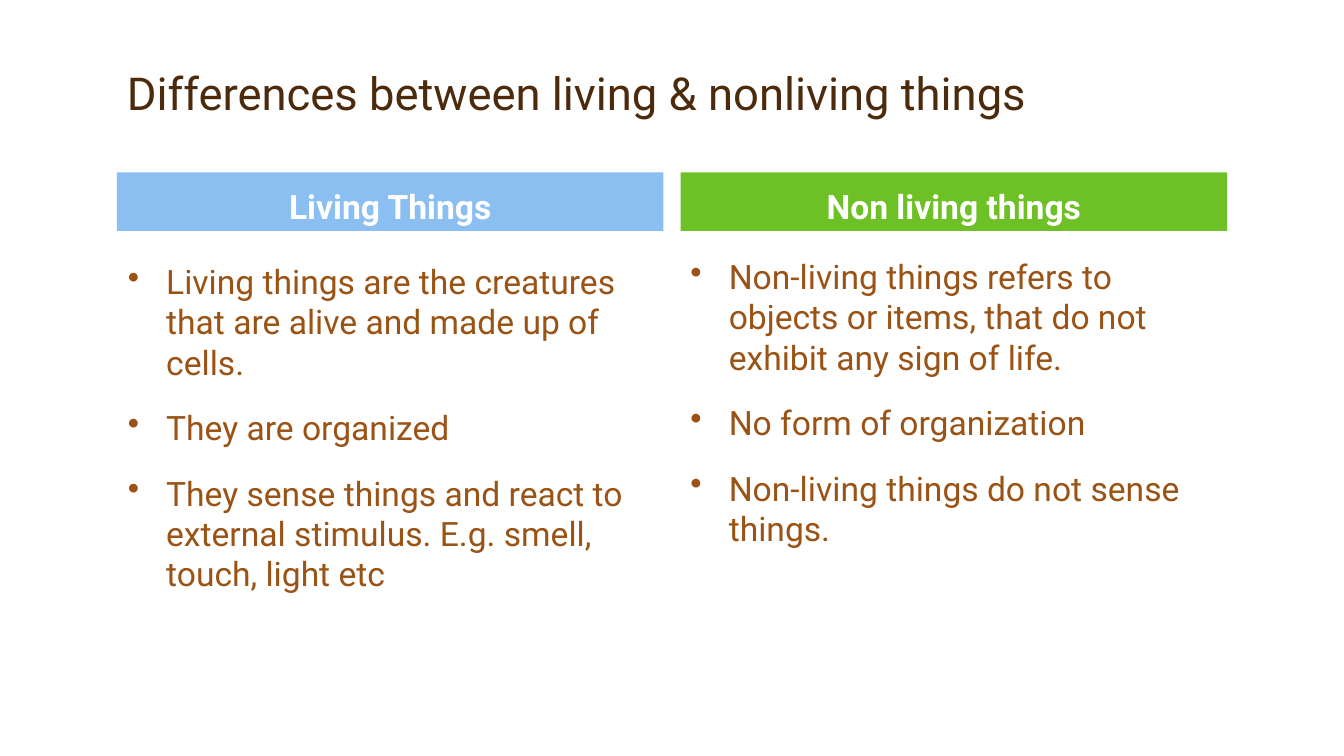
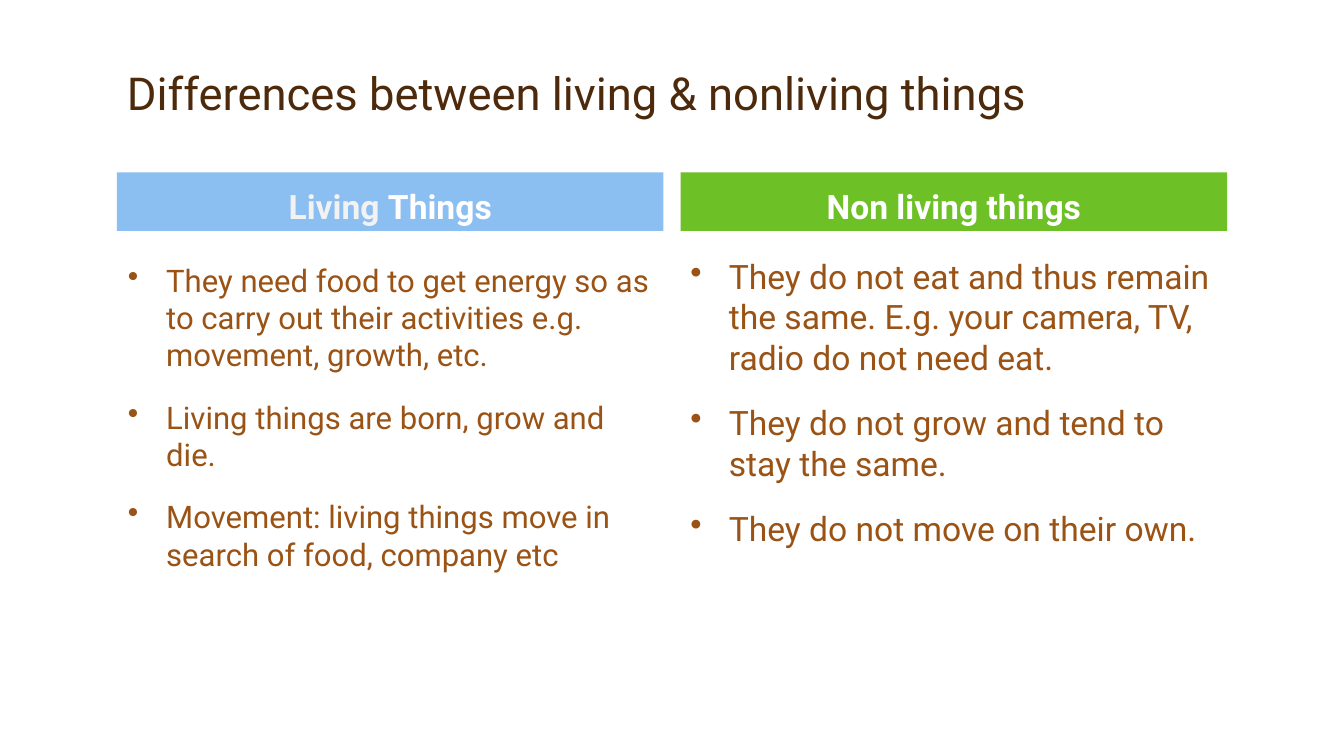
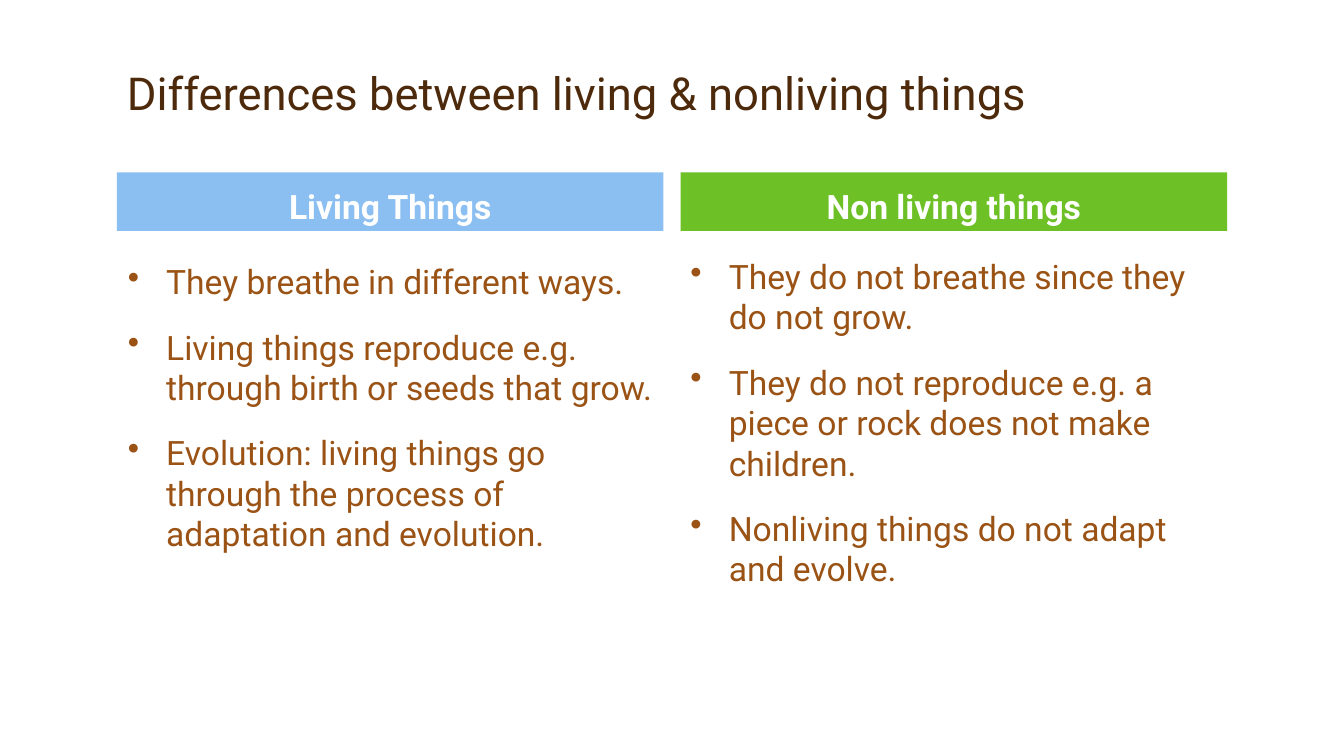
from lxml.etree import SubElement
from pptx import Presentation
from pptx.dml.color import RGBColor
from pptx.enum.shapes import MSO_SHAPE
from pptx.enum.text import MSO_ANCHOR, PP_ALIGN
from pptx.oxml.ns import qn
from pptx.util import Pt

PX = 9144
FONT = "Roboto"
TITLE_BROWN = RGBColor(0x4D, 0x2A, 0x0B)
BODY_BROWN = RGBColor(0x9A, 0x53, 0x15)
SKY = RGBColor(0x8B, 0xBE, 0xF1)
GREEN = RGBColor(0x6D, 0xC0, 0x25)
WHITE = RGBColor(0xFF, 0xFF, 0xFF)
PALE = RGBColor(0xF2, 0xF2, 0xF2)

LEFT = 116
COLUMN_WIDTH = 542
COLUMN_STEP = 559
TITLE = "Differences between living & nonliving things"


class ComparisonDeck:
    """Builds slides that compare two columns under a shared title."""

    def __init__(self):
        self.deck = Presentation()
        self.deck.slide_width = 1333 * PX
        self.deck.slide_height = 750 * PX
        self.slide = None

    def new_slide(self):
        self.slide = self.deck.slides.add_slide(self.deck.slide_layouts[6])

    def style(self, paragraph, size, color, bold=False):
        paragraph.font.name = FONT
        paragraph.font.size = Pt(size)
        paragraph.font.color.rgb = color
        paragraph.font.bold = bold

    def text_frame(self, left, top, width, height):
        box = self.slide.shapes.add_textbox(left * PX, top * PX, width * PX, height * PX)
        box.text_frame.word_wrap = True
        return box.text_frame

    def title(self, wording):
        frame = self.text_frame(LEFT, 33, 1100, 91)
        frame.vertical_anchor = MSO_ANCHOR.BOTTOM
        heading = frame.paragraphs[0]
        heading.text = wording
        heading.line_spacing = 0.9
        self.style(heading, 32.4, TITLE_BROWN)

    def band(self, left, words, fill, first_word_color):
        band = self.slide.shapes.add_shape(
            MSO_SHAPE.RECTANGLE, left * PX, 171 * PX, COLUMN_WIDTH * PX, 58 * PX)
        band.shadow.inherit = False
        band.fill.solid()
        band.fill.fore_color.rgb = fill
        band.line.fill.background()
        band.text_frame.word_wrap = True
        band.text_frame.vertical_anchor = MSO_ANCHOR.BOTTOM
        label = band.text_frame.paragraphs[0]
        label.alignment = PP_ALIGN.CENTER
        self.style(label, 24, WHITE, bold=True)
        first, rest = words.split(" ", 1)
        if first_word_color == WHITE:
            label.add_run().text = words
        else:
            first_word = label.add_run()
            first_word.text = first + " "
            first_word.font.color.rgb = first_word_color
            label.add_run().text = rest

    def bullets(self, left, top, points, size):
        frame = self.text_frame(left, top, COLUMN_WIDTH, 380)
        for index, point in enumerate(points):
            paragraph = frame.add_paragraph() if index else frame.paragraphs[0]
            paragraph.text = point
            properties = paragraph._p.get_or_add_pPr()
            properties.set("marL", str(38 * PX))
            properties.set("indent", str(-38 * PX))
            SubElement(properties, qn("a:buChar")).set("char", "•")
            if index:
                paragraph.space_before = Pt(18)
            self.style(paragraph, size, BODY_BROWN)

    def comparison(self, living, nonliving, living_size=24, first_word_color=WHITE):
        self.new_slide()
        self.title(TITLE)
        right = LEFT + COLUMN_STEP
        self.band(LEFT, "Living Things", SKY, first_word_color)
        self.bullets(LEFT + 1, 254, living, living_size)
        self.band(right, "Non living things", GREEN, WHITE)
        self.bullets(right, 249, nonliving, 24)


def main():
    lesson = ComparisonDeck()
    lesson.comparison(
        ["Living things are the creatures that are alive and made up of cells.",
         "They are organized",
         "They sense things and react to external stimulus. E.g. smell, touch, light etc"],
        ["Non-living things refers to objects or items, that do not exhibit any sign of life.",
         "No form of organization",
         "Non-living things do not sense things."])
    lesson.comparison(
        ["They need food to get energy so as to carry out their activities e.g. movement, growth, etc.",
         "Living things are born, grow and die.",
         "Movement: living things move in search of food, company etc"],
        ["They do not eat and thus remain the same. E.g. your camera, TV, radio do not need eat.",
         "They do not grow and tend to stay the same.",
         "They do not move on their own."],
        living_size=22.2, first_word_color=PALE)
    lesson.comparison(
        ["They breathe in different ways.",
         "Living things reproduce e.g. through birth or seeds that grow.",
         "Evolution: living things go through the process of adaptation and evolution."],
        ["They do not breathe since they do not grow.",
         "They do not reproduce e.g. a piece or rock does not make children.",
         "Nonliving things do not adapt and evolve."])
    lesson.deck.save("out.pptx")


if __name__ == "__main__":
    main()
